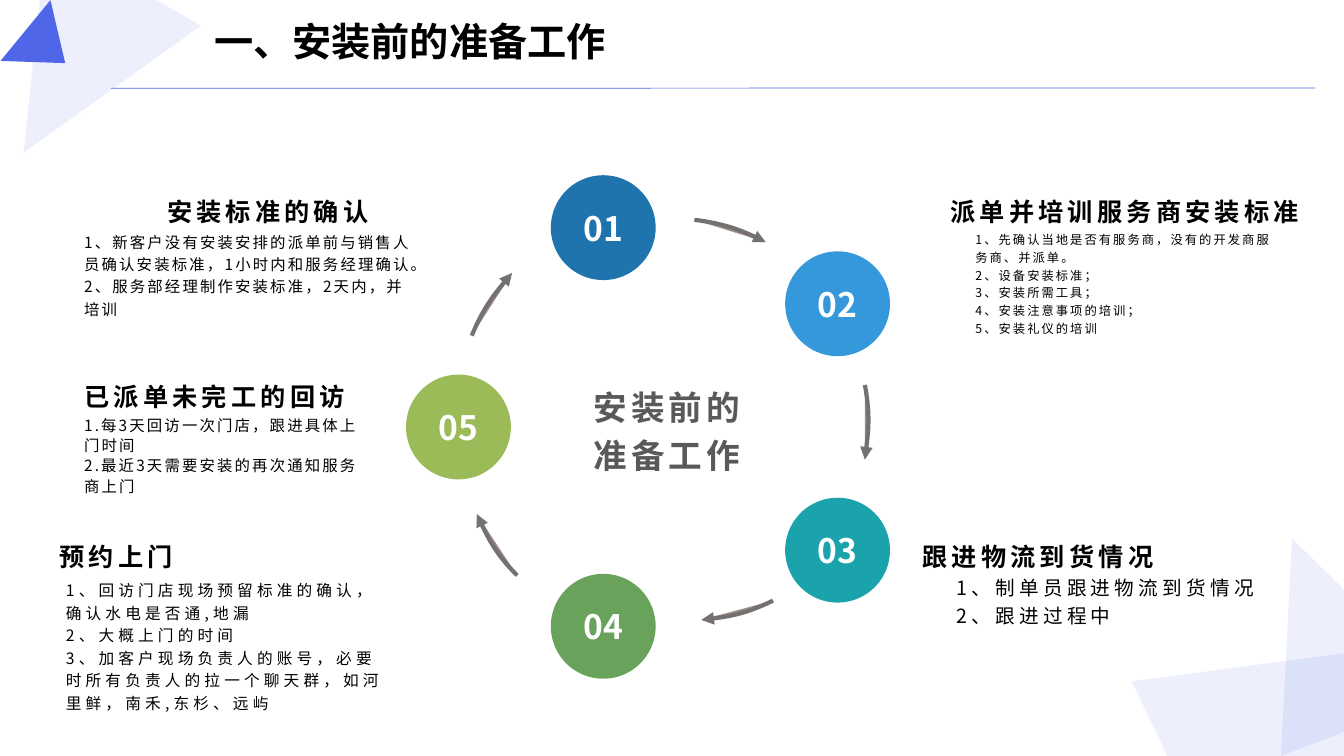
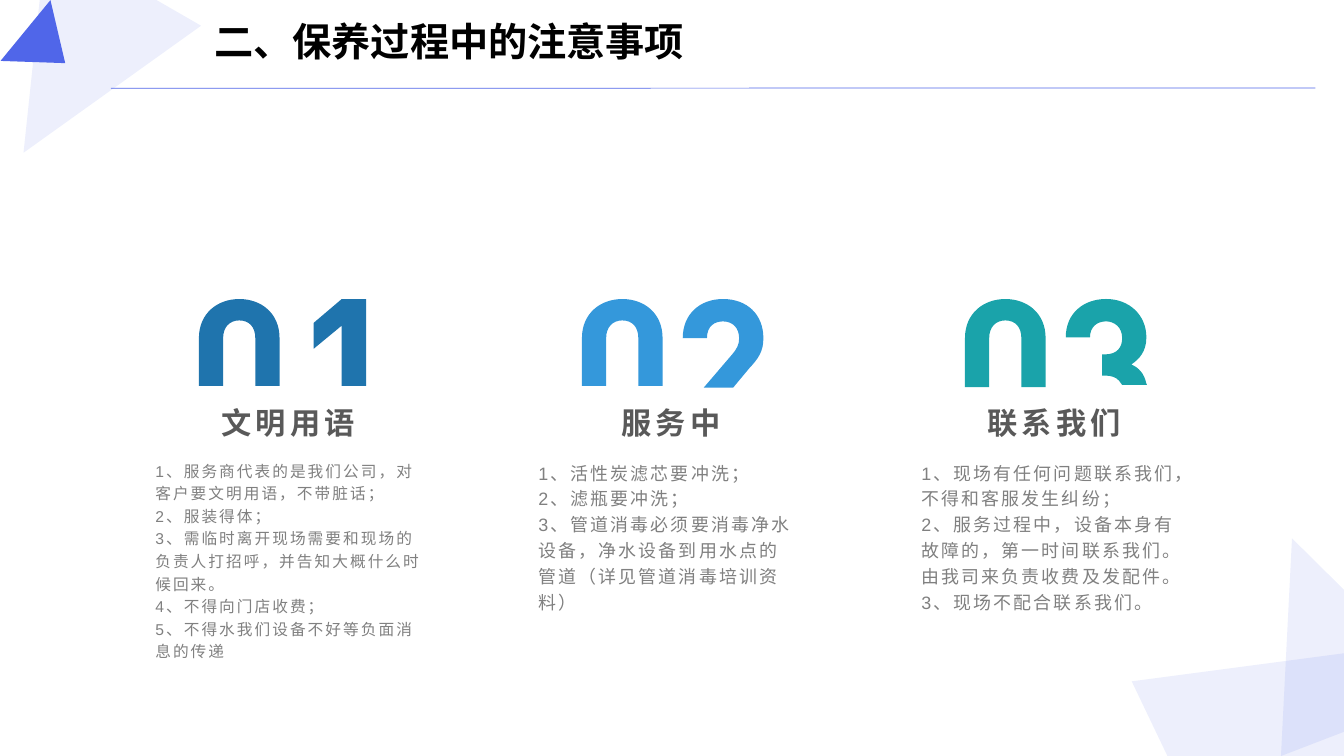
from dataclasses import dataclass
from math import cos, radians, sin

from lxml.etree import SubElement
from pptx import Presentation
from pptx.dml.color import RGBColor
from pptx.enum.shapes import MSO_CONNECTOR, MSO_SHAPE
from pptx.enum.text import MSO_ANCHOR, MSO_AUTO_SIZE, PP_ALIGN
from pptx.oxml.ns import qn
from pptx.util import Pt

SANS, ARIAL = "Noto Sans CJK SC", "Arial"
BLACK, WHITE, DARK, GRAY = "000000", "FFFFFF", "595959", "808080"
ACCENT, STEEL, TAUPE = "5066E9", "767171", "9C9088"
BLUE, SKY, TEAL, GREEN, LIME = "1F74AD", "3498DB", "1AA3AA", "69A35B", "9BBB59"
TOP, MID, LOW = MSO_ANCHOR.TOP, MSO_ANCHOR.MIDDLE, MSO_ANCHOR.BOTTOM
LEFT, CENTER, RIGHT = PP_ALIGN.LEFT, PP_ALIGN.CENTER, PP_ALIGN.RIGHT


@dataclass
class Style:
    size: float
    color: str = BLACK
    bold: bool = False
    space: float = 0
    line: float = 1.2
    font: str = SANS
    align: PP_ALIGN = LEFT
    anchor: MSO_ANCHOR = TOP
    pad: tuple = (0, 3.6)  # top and bottom


@dataclass
class Block:
    box: tuple
    style: Style
    lines: list


@dataclass
class Column:
    name: str
    color: str
    digit: list
    shift: float  # from the zero to the second digit
    base: float  # height of the zero
    size: float
    area: tuple  # width and height of the text
    lines: list


def head(align=LEFT, line=1.2):
    return Style(18, bold=True, space=3, line=line, align=align, anchor=LOW, pad=(3.6, 0))


def body(size, space=1.5, line=1.2, color=BLACK, font=SANS):
    return Style(size, color, False, space, line, font)


TITLE = Style(28, bold=True, line=1, pad=(3.6, 3.6))
NUMBER = Style(24, WHITE, True, line=1, align=CENTER, anchor=MID, pad=(0, 0))
HUB = Style(24, DARK, True, 3, align=CENTER, anchor=MID, pad=(3.6, 3.6))
NAME = Style(21.6, DARK, True, 3, font=ARIAL, align=CENTER, anchor=MID, pad=(3.6, 3.6))

BLOCKS = [
    Block((393.5, 222.5, 165.6, 164.9), HUB, ["安装前的", "准备工作"]),
    Block((53, 130.3, 217.4, 31.7), head(RIGHT), ["安装标准的确认"]),
    Block((53, 163.9, 253.4, 88.6), body(11), [
        "1、新客户没有安装安排的派单前与销售人员确认安装标准，1小时内和服务经理确认。",
        "2、服务部经理制作安装标准，2天内，并培训"]),
    Block((689.6, 163.9, 233.3, 87.8), body(8.8), [
        "1、先确认当地是否有服务商，没有的开发商服务商、并派单。",
        "2、设备安装标准；",
        "3、安装所需工具；",
        "4、安装注意事项的培训；",
        "5、安装礼仪的培训"]),
    Block((676.2, 408.2, 249.8, 101.5), body(14, 3), [
        "1、制单员跟进物流到货情况",
        "2、跟进过程中"]),
    Block((35.3, 353.5, 288.7, 54.7), head(line=1), ["预约上门"]),
    Block((40, 412.3, 249.8, 101.5), body(11.2, 3), [
        "1、回访门店现场预留标准的确认，确认水电是否通,地漏",
        "2、大概上门的时间",
        "3、加客户现场负责人的账号，必要时所有负责人的拉一个聊天群，如河里鲜，南禾,东杉、远屿"]),
    Block((53.2, 262.1, 217.4, 31.7), head(), ["已派单未完工的回访"]),
    Block((53, 295.7, 217.4, 65.5), body(11, line=1.1), [
        "1.每3天回访一次门店，跟进具体上门时间",
        "2.最近3天需要安装的再次通知服务商上门"]),
    Block((671.8, 114.9, 282.2, 46.8), head(), ["派单并培训服务商安装标准"]),
    Block((651.8, 353.5, 288.7, 54.7), head(line=1), ["跟进物流到货情况"]),
]

# In every path a pair is a corner and six numbers are a cubic curve.
ARROWS = [
    [(337, 239.8), (345.6, 219, 360, 201.6, 365.8, 195)],
    [(369.4, 411), (353.5, 395, 344, 375, 340.6, 367.2)],
    [(496, 157), (519, 160, 539, 168.5, 547, 173)],
    [(617.8, 275), (622, 297.4, 619, 319.7, 617.8, 328.3)],
    [(552.2, 429), (532, 439, 510, 442, 501, 442.8)],
]
ONE = [(20, 0), (37.4, 0), (37.4, 62), (20, 62), (20, 19), (0, 35.5), (0, 17)]
TWO = [
    (28.8, 0), (46, 0, 57.6, 11, 57.6, 28), (57.6, 37.5, 54, 42.5, 47.5, 49.5),
    (36, 63.3), (15, 63.3), (35.3, 39.6), (38.9, 35.3, 40.3, 32.4, 40.3, 28),
    (40.3, 21, 36, 16, 28.8, 16), (23, 16, 17.3, 19, 17.3, 28), (0, 28),
    (0, 11, 12, 0, 28.8, 0),
]
THREE = [
    (28.8, 0), (45.4, 0, 57.6, 11.5, 57.6, 27.4), (57.6, 37.4, 52.6, 43, 46.8, 46.8),
    (52, 49, 56, 53, 57.6, 60.5), (58, 61.4), (40.3, 61.4), (38, 58.3),
    (36, 56, 32.4, 54.7, 28, 54.7), (26, 54.7), (26, 39.6), (28, 39.6),
    (36.7, 39.6, 40.3, 34.6, 40.3, 28), (40.3, 20, 34.6, 16, 28.8, 16),
    (22.3, 16, 17.3, 20, 17.3, 27.4), (0, 27.4), (0, 10, 13, 0, 28.8, 0),
]
COLUMNS = [
    Column("文明用语", BLUE, ONE, 82, 62, 11.2, (204.5, 164.9), [
        "1、服务商代表的是我们公司，对客户要文明用语，不带脏话；",
        "2、服装得体；",
        "3、需临时离开现场需要和现场的负责人打招呼，并告知大概什么时候回来。",
        "4、不得向门店收费；",
        "5、不得水我们设备不好等负面消息的传递"]),
    Column("服务中", SKY, TWO, 72, 62, 12.8, (196.6, 122.4), [
        "1、活性炭滤芯要冲洗；",
        "2、滤瓶要冲洗；",
        "3、管道消毒必须要消毒净水设备，净水设备到用水点的管道（详见管道消毒培训资料）"]),
    Column("联系我们", TEAL, THREE, 72, 63, 12.8, (204.5, 122.4), [
        "1、现场有任何问题联系我们，不得和客服发生纠纷；",
        "2、服务过程中，设备本身有故障的，第一时间联系我们。由我司来负责收费及发配件。",
        "3、现场不配合联系我们。"]),
]
# Rotation, centre and final corners of each pale shape
PALE = [
    (210.4, (60.1, 52.2), [(27.4, -0.7), (110.2, -0.7), (142.6, 18), (15.8, 108.7)]),
    (338.8, (928.8, 458.3), [(923, 384.5), (960, 421.2), (960, 522.7), (915.1, 540)]),
    (64.1, (898.9, 506.9), [(960.5, 466.6), (960.5, 540.7), (834.5, 540.7), (808.6, 486.7)]),
]


def rgb(code: str) -> RGBColor:
    return RGBColor.from_string(code)


def paint(shape, color: str, alpha: int = 100) -> None:
    """Flat fill with no outline and no shadow."""
    shape.shadow.inherit = False
    shape.fill.solid()
    shape.fill.fore_color.rgb = rgb(color)
    shape.line.fill.background()
    if alpha < 100:
        tone = shape.element.spPr.find(qn("a:solidFill"))[0]
        SubElement(tone, qn("a:alpha")).set("val", str(alpha * 1000))


def write(shape, lines: list, style: Style) -> None:
    frame = shape.text_frame
    frame.word_wrap = style is not TITLE
    if style is TITLE:
        frame.auto_size = MSO_AUTO_SIZE.SHAPE_TO_FIT_TEXT
    frame.vertical_anchor = style.anchor
    side = 0 if style is NUMBER else 7.2
    frame.margin_left = frame.margin_right = Pt(side)
    frame.margin_top, frame.margin_bottom = map(Pt, style.pad)
    frame.text = "\n".join(lines)
    for para in frame.paragraphs:
        para.alignment = style.align
        para.line_spacing = style.line
        font = para.font
        font.size, font.bold, font.name = Pt(style.size), style.bold, style.font
        font.color.rgb = rgb(style.color)
        props = para._p.pPr.find(qn("a:defRPr"))
        props.set("spc", str(round(style.space * 100)))
        SubElement(props, qn("a:ea")).set("typeface", SANS)


def label(slide, box: tuple, lines: list, style: Style) -> None:
    write(slide.shapes.add_textbox(*map(Pt, box)), lines, style)


def outline(slide, path: list, x: float = 0, y: float = 0, close: bool = True):
    """Build a freeform, then join each curve's three segments into one cubic."""
    pairs = [(p[i], p[i + 1]) for p in path for i in range(0, len(p), 2)]
    points = [(Pt(x + px), Pt(y + py)) for px, py in pairs]
    form = slide.shapes.build_freeform(*points[0])
    form.add_line_segments(points[1:], close=close)
    shape = form.convert_to_shape()
    parts = iter(list(shape.element.iter(qn("a:lnTo"))))
    for part in path[1:]:
        first = next(parts)
        if len(part) == 6:
            first.tag = qn("a:cubicBezTo")
            for _ in range(2):
                spare = next(parts)
                first.append(spare[0])
                spare.getparent().remove(spare)
    return shape


def turn(point: tuple, center: tuple, angle: float) -> tuple:
    c, s = cos(radians(angle)), sin(radians(angle))
    dx, dy = point[0] - center[0], point[1] - center[1]
    return center[0] + dx * c - dy * s, center[1] + dx * s + dy * c


def arrow(slide, path: list) -> None:
    shape = outline(slide, path, close=False)
    paint(shape, TAUPE)
    shape.line.color.rgb = rgb(STEEL)
    shape.line.width = Pt(3)
    SubElement(shape.line._get_or_add_ln(), qn("a:tailEnd")).set("type", "triangle")


def decor(slide, layout) -> None:
    """Draw the corner shapes and the title rule, then move them to the layout."""
    for angle, center, corners in PALE:
        shape = outline(slide, [turn(p, center, -angle) for p in corners])
        shape.rotation = angle
        paint(shape, ACCENT, 10)
    tip = slide.shapes.add_shape(
        MSO_SHAPE.ISOSCELES_TRIANGLE, Pt(4.3), Pt(15.1), Pt(56.2), Pt(36.7))
    tip.rotation = 129.4
    paint(tip, ACCENT)
    rule = slide.shapes.add_connector(
        MSO_CONNECTOR.STRAIGHT, Pt(79.2), Pt(63.1), Pt(939.6), Pt(62.8))
    rule.line.color.rgb = rgb(ACCENT)
    rule.line.width = Pt(0.5)
    SubElement(rule.element.spPr, qn("a:effectLst"))
    for shape in list(slide.shapes):
        layout.shapes.element.append(shape.element)


def cycle(slide) -> None:
    """Five numbered discs on a ring, with arrows and texts around it."""
    size, ring, hub = 74.9, 149.7, (477.2, 305)
    for i, color in enumerate([BLUE, SKY, TEAL, GREEN, LIME]):
        x, y = turn((hub[0] + ring, hub[1]), hub, 72 * i - 108)
        disc = slide.shapes.add_shape(
            MSO_SHAPE.OVAL, Pt(x - size / 2), Pt(y - size / 2), Pt(size), Pt(size))
        paint(disc, color)
        write(disc, [f"{i + 1:02}"], NUMBER)
    for path in ARROWS:
        arrow(slide, path)
    for block in BLOCKS:
        label(slide, block.box, block.lines, block.style)


def zero(base: float) -> list:
    return [
        (28.8, 0), (44.4, 0, 57.6, 10, 57.6, 28), (57.6, base), (40.3, base), (40.3, 28),
        (40.3, 20, 36, 15.3, 28.8, 15.3), (22, 15.3, 17.3, 20, 17.3, 28), (17.3, base),
        (0, base), (0, 28), (0, 10, 13.5, 0, 28.8, 0),
    ]


def columns(slide) -> None:
    for i, col in enumerate(COLUMNS):
        x, y = 142.1 + 273.6 * i, 213.6
        paint(outline(slide, zero(col.base), x, y), col.color)
        paint(outline(slide, col.digit, x + col.shift, y), col.color)
        label(slide, (x + 0.3, 278.6, 126.7, 41), [col.name], NAME)
        style = body(col.size, color=GRAY, font=ARIAL)
        label(slide, (x - 38.2, 327.1, *col.area), col.lines, style)


def main() -> None:
    deck = Presentation()
    deck.slide_width, deck.slide_height = Pt(960), Pt(540)
    blank = deck.slide_layouts[6]
    pages = [("一、安装前的准备工作", 295.2, cycle), ("二、保养过程中的注意事项", 351.4, columns)]
    for i, (title, width, draw) in enumerate(pages):
        slide = deck.slides.add_slide(blank)
        if i == 0:
            decor(slide, blank)
        label(slide, (146, 8.6, width, 41), [title], TITLE)
        draw(slide)
    deck.save("out.pptx")


if __name__ == "__main__":
    main()
